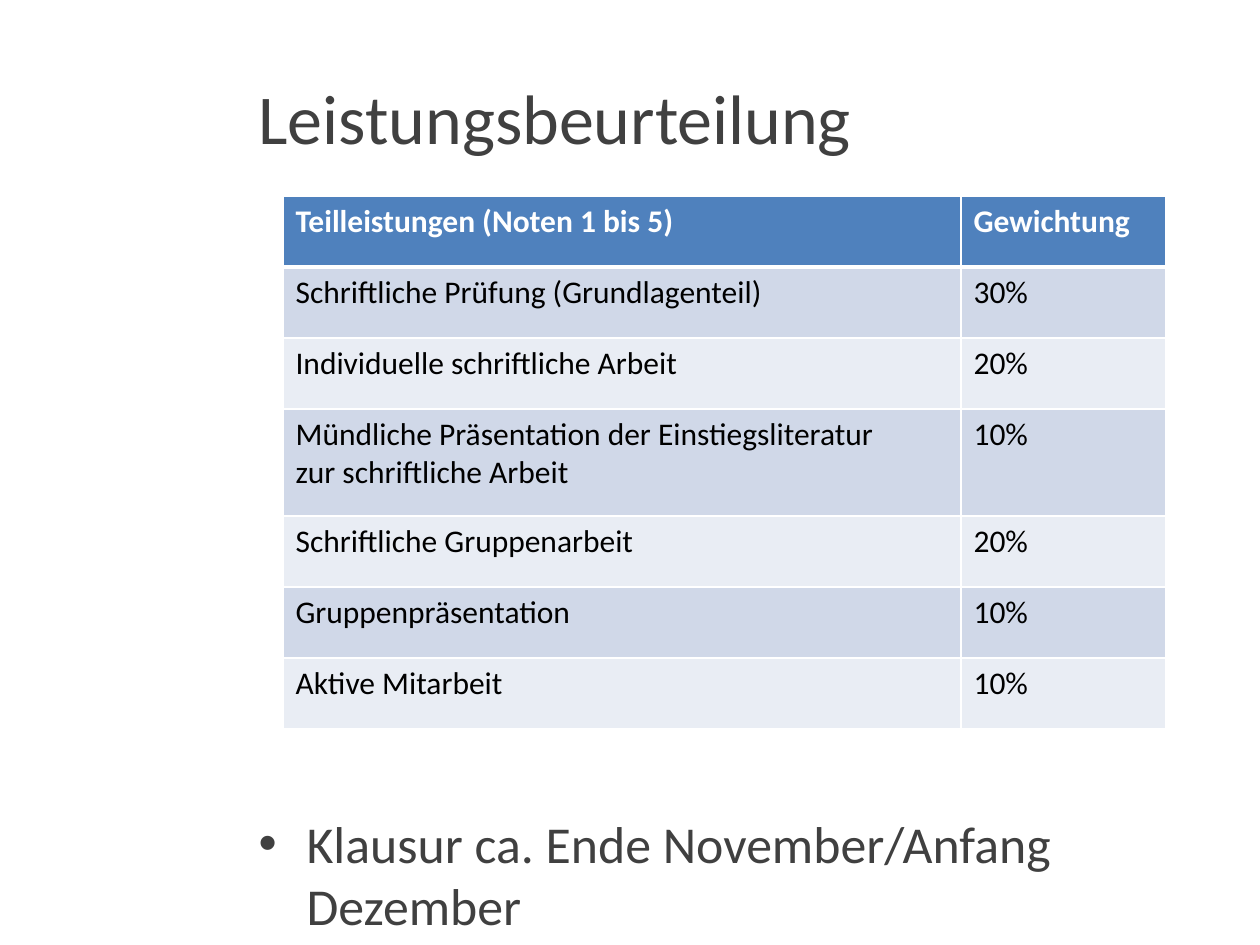
"""Builds the slide on grading: a weighted table of graded parts and an exam date."""
from lxml.etree import SubElement as Sub
from pptx import Presentation
from pptx.dml.color import RGBColor as RGB
from pptx.enum.text import MSO_ANCHOR as Anchor, MSO_AUTO_SIZE as Fit, PP_ALIGN as Align
from pptx.oxml.ns import qn
from pptx.util import Emu, Pt

TITLE = "Leistungsbeurteilung"
NOTE = "Klausur ca. Ende November/Anfang Dezember"
ROWS = [
    ("Teilleistungen (Noten 1 bis 5)", "Gewichtung"),
    ("Schriftliche Prüfung (Grundlagenteil)", "30%"),
    ("Individuelle schriftliche Arbeit", "20%"),
    ("Mündliche Präsentation der Einstiegsliteratur\nzur schriftliche Arbeit", "10%"),
    ("Schriftliche Gruppenarbeit", "20%"),
    ("Gruppenpräsentation", "10%"),
    ("Aktive Mitarbeit", "10%"),
]
COLS = (678, 205)
ROW, TALL = 71, 107
LEFT, TOP = 283, 196

FONT = "Calibri"
GREY = RGB(0x40, 0x40, 0x40)
WHITE = RGB(0xFF, 0xFF, 0xFF)
BLACK = RGB(0, 0, 0)
BLUE = RGB(0x4F, 0x81, 0xBD)
BANDS = (RGB(0xE9, 0xED, 0xF4), RGB(0xD0, 0xD8, 0xE8))


def px(n):
    return Emu(round(n * 914400 / 126))


def write(para, text, size, color, bold=False):
    for i, line in enumerate(text.split("\n")):
        if i:
            para.add_line_break()
        run = para.add_run()
        run.text = line
        font = run.font
        font.name, font.size, font.bold = FONT, Pt(size), bold
        font.color.rgb = color


def place(shape, left, top, width, height):
    shape.left, shape.top = px(left), px(top)
    shape.width, shape.height = px(width), px(height)
    shape.text_frame.auto_size = Fit.NONE
    return shape.text_frame


def edge(cell, head):
    props = cell._tc.get_or_add_tcPr()
    for side in "LRTB":
        width = Pt(3 if head and side == "B" else 1)
        line = Sub(props, qn(f"a:ln{side}"), w=str(width))
        Sub(Sub(line, qn("a:solidFill")), qn("a:srgbClr"), val=str(WHITE))


def main():
    deck = Presentation()
    deck.slide_width, deck.slide_height = px(1260), px(945)
    slide = deck.slides.add_slide(deck.slide_layouts[1])

    frame = place(slide.shapes.title, 246, 38, 951, 157)
    frame.vertical_anchor = Anchor.MIDDLE
    frame.paragraphs[0].alignment = Align.LEFT
    write(frame.paragraphs[0], TITLE, 40, GREY)

    frame = place(slide.placeholders[1], 246, 805, 951, 138)
    para = frame.paragraphs[0]
    props = para._p.get_or_add_pPr()
    props.set("marL", str(px(48)))
    props.set("indent", str(-px(48)))
    para.space_before = Pt(0)
    write(para, NOTE, 29.6, GREY)

    highs = [TALL if "\n" in row[0] else ROW for row in ROWS]
    table = slide.shapes.add_table(
        len(ROWS), len(COLS), px(LEFT), px(TOP), px(sum(COLS)), px(sum(highs))
    ).table
    for col, width in zip(table.columns, COLS):
        col.width = px(width)
    for r, (row, high) in enumerate(zip(ROWS, highs)):
        table.rows[r].height = px(high)
        head = r == 0
        for c, text in enumerate(row):
            cell = table.cell(r, c)
            edge(cell, r == 0)
            cell.fill.solid()
            cell.fill.fore_color.rgb = BLUE if head else BANDS[r % 2]
            write(cell.text_frame.paragraphs[0], text, 18, WHITE if head else BLACK, head)

    deck.save("out.pptx")


if __name__ == "__main__":
    main()
